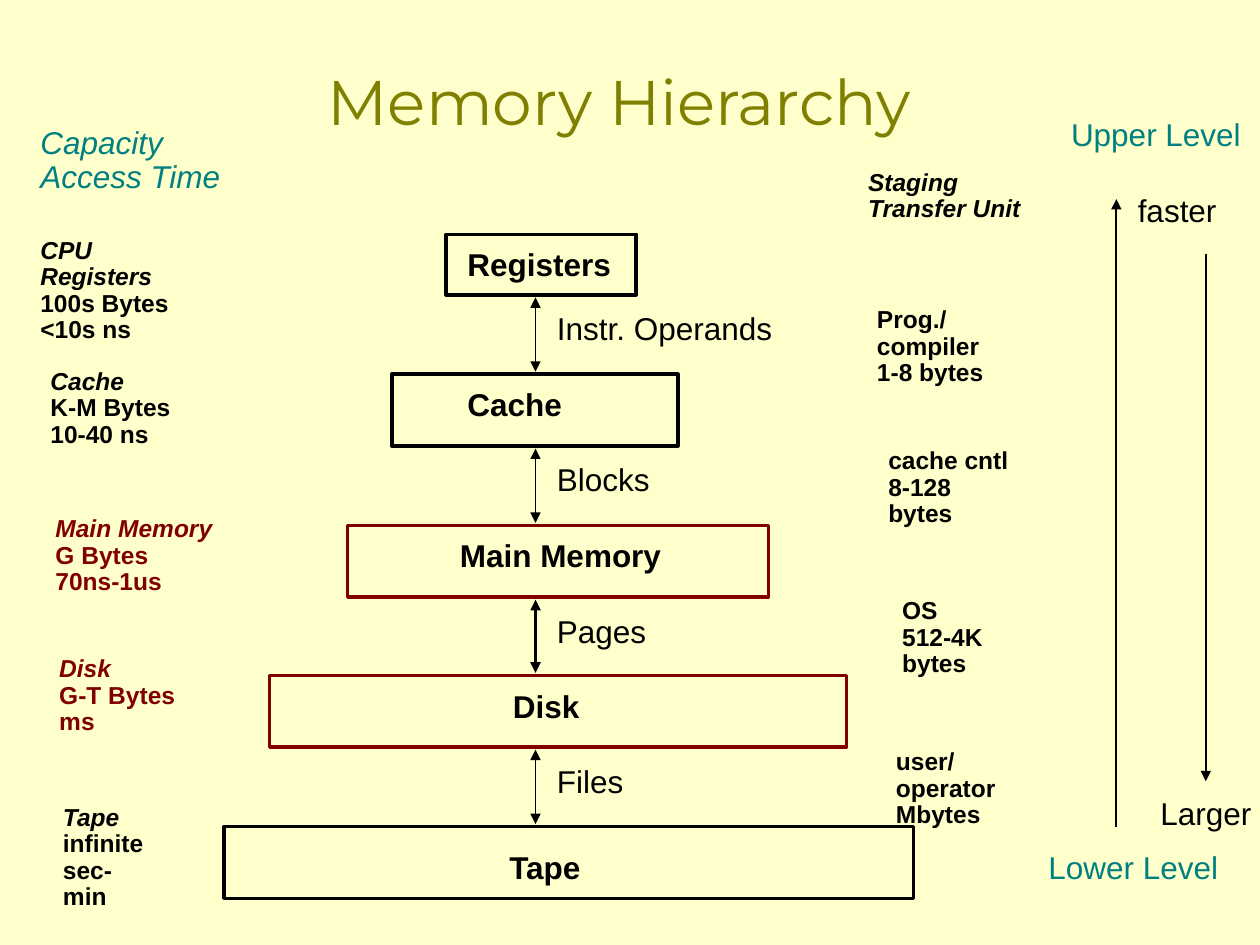
"""Build the Memory Hierarchy slide."""
from lxml import etree
from pptx import Presentation
from pptx.dml.color import RGBColor
from pptx.enum.shapes import MSO_CONNECTOR, MSO_SHAPE
from pptx.enum.text import MSO_ANCHOR, MSO_AUTO_SIZE, PP_ALIGN
from pptx.oxml.ns import qn
from pptx.util import Inches, Pt

LINE, RECT = MSO_CONNECTOR.STRAIGHT, MSO_SHAPE.RECTANGLE
MIDDLE, TOP = MSO_ANCHOR.MIDDLE, MSO_ANCHOR.TOP
LEFT, CENTER = PP_ALIGN.LEFT, PP_ALIGN.CENTER
GROW, FIXED = MSO_AUTO_SIZE.SHAPE_TO_FIT_TEXT, MSO_AUTO_SIZE.NONE

COLORS = {"paper": "FFFFCC", "black": "000000", "red": "800000",
          "teal": "008080", "olive": "808000"}

# name, colour, box (left, top, width, height), label (left, drop, width)
LEVELS = [
    ("Registers", "black", (3.54, 1.86, 1.51, 0.48), (3.64, 0.1, 1.35)),
    ("Cache", "black", (3.11, 2.97, 2.27, 0.57), (3.64, 0.1, 0.95)),
    ("Main Memory", "red", (2.76, 4.17, 3.34, 0.57), (3.58, 0.1, 1.89)),
    ("Disk", "red", (2.14, 5.36, 4.58, 0.57), (4, 0.11, 0.75)),
    ("Tape", "black", (1.78, 6.56, 5.47, 0.57), (3.95, 0.19, 0.75)),
]
MOVES = [("Instr. Operands", 1), ("Blocks", 1), ("Pages", 2), ("Files", 1)]
SPECS = [
    (["CPU Registers", "100s Bytes", "<10s ns"], "black", (0.25, 1.86, 1.45, 0.69)),
    (["Cache", "K-M Bytes", "10-40 ns"], "black", (0.33, 2.9, 1.15, 0.7)),
    (["Main Memory", "G Bytes", "70ns-1us"], "red", (0.37, 4.07, 1.5, 0.7)),
    (["Disk", "G-T Bytes", "ms"], "red", (0.4, 5.18, 1.15, 0.7)),
    (["Tape", "infinite", "sec-min"], "black", (0.43, 6.36, 0.84, 0.69)),
]
UNITS = [
    (["Prog./compiler", "1-8 bytes"], (6.89, 2.41, 1.45, 0.48)),
    (["cache cntl", "8-128 bytes"], (6.98, 3.53, 1.17, 0.48)),
    (["OS", "512-4K bytes"], (7.09, 4.72, 1.3, 0.48)),
    (["user/operator", "Mbytes"], (7.04, 5.92, 1.35, 0.48)),
]
SIDES = [
    ("Upper Level", "teal", (8.43, 0.93, 1.55, 0.31)),
    ("Lower Level", "teal", (8.25, 6.75, 1.55, 0.31)),
    ("faster", "black", (8.96, 1.53, 0.85, 0.31)),
    ("Larger", "black", (9.14, 6.32, 0.9, 0.31)),
]
TRENDS = [(8.86, 6.56, 1.58), (9.57, 2.02, 6.2)]
AXIS, GAP = 4.25, 0.02


def color(name):
    return RGBColor.from_string(COLORS[name])


def add_text(slide, lines, area, tint="black", size=18, bold=False, slant=0,
             space=0.85, font="Arial", align=LEFT, anchor=TOP, fit=GROW):
    frame = slide.shapes.add_textbox(*map(Inches, area)).text_frame
    frame.word_wrap, frame.auto_size = True, fit
    frame.vertical_anchor = anchor
    frame.margin_left = frame.margin_right = Inches(0.07)
    frame.margin_top = frame.margin_bottom = Inches(0.03)
    for i, line in enumerate(lines):
        para = frame.add_paragraph() if i else frame.paragraphs[0]
        para.alignment, para.line_spacing = align, space
        run = para.add_run()
        run.text = line
        run.font.name, run.font.size = font, Pt(size)
        run.font.bold, run.font.italic = bold, i < slant
        run.font.color.rgb = color(tint)


def add_box(slide, area, tint):
    box = slide.shapes.add_shape(RECT, *map(Inches, area))
    box.shadow.inherit = False
    box.fill.background()
    box.line.color.rgb = color(tint)
    box.line.width = Pt(2)


def add_arrow(slide, x, start, end, width=1, tips=("tailEnd",)):
    arrow = slide.shapes.add_connector(
        LINE, *map(Inches, (x, start, x, end)))
    arrow.line.color.rgb = color("black")
    arrow.line.width = Pt(width)
    props = arrow._element.spPr
    for tip in tips:
        etree.SubElement(props.find(qn("a:ln")), qn("a:" + tip), type="triangle")
    etree.SubElement(props, qn("a:effectLst"))


def main():
    deck = Presentation()
    deck.slide_width, deck.slide_height = Inches(10), Inches(7.5)
    slide = deck.slides.add_slide(deck.slide_layouts[6])
    slide.background.fill.solid()
    slide.background.fill.fore_color.rgb = color("paper")

    add_text(slide, ["Memory Hierarchy"], (0.58, 0.17, 8.67, 1.25), "olive", 36,
             space=1.0, font="Montserrat", align=CENTER, anchor=MIDDLE, fit=FIXED)
    add_text(slide, ["Capacity", "Access Time"], (0.25, 0.98, 1.65, 0.6), "teal",
             slant=2, space=0.9)
    add_text(slide, ["Staging", "Transfer Unit"], (6.82, 1.32, 1.74, 0.48),
             size=14, bold=True, slant=2, space=0.9)

    for name, tint, area, (left, drop, width) in LEVELS:
        add_box(slide, area, tint)
        add_text(slide, [name], (left, area[1] + drop, width, 0.31), bold=True,
                 align=CENTER if name == "Tape" else LEFT)
    for (name, width), upper, lower in zip(MOVES, LEVELS, LEVELS[1:]):
        base = upper[2][1] + upper[2][3]
        add_arrow(slide, AXIS, base + GAP, lower[2][1] - GAP, width,
                  ("headEnd", "tailEnd"))
        add_text(slide, [name], (AXIS + 0.1, base + 0.13, 1.95, 0.31))
    for lines, tint, area in SPECS:
        add_text(slide, lines, area, tint, 14, True, 1, 0.9)
    for lines, area in UNITS:
        add_text(slide, lines, area, size=14, bold=True, space=0.9)
    for name, tint, area in SIDES:
        add_text(slide, [name], area, tint)
    for trend in TRENDS:
        add_arrow(slide, *trend)
    deck.save("out.pptx")


if __name__ == "__main__":
    main()
